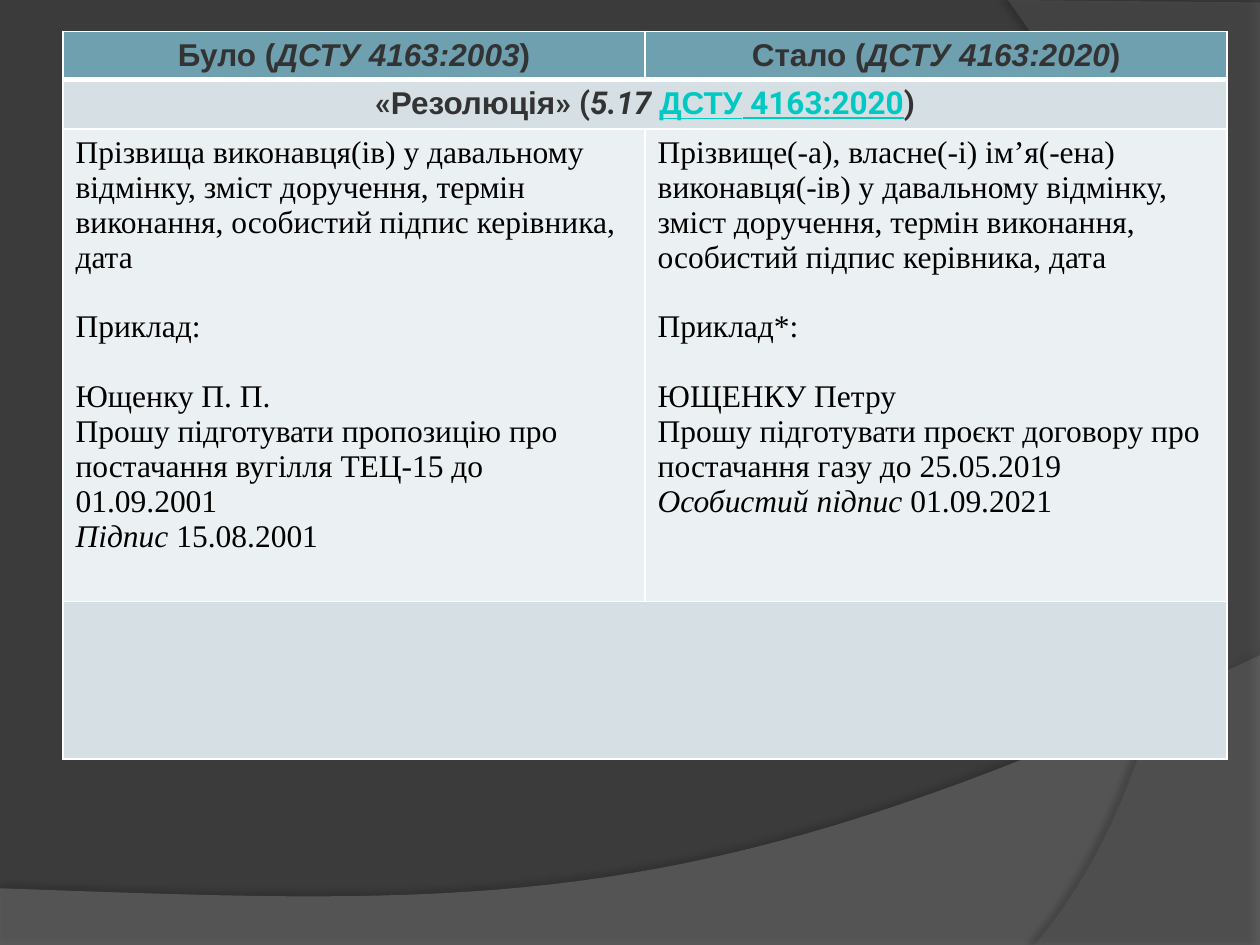
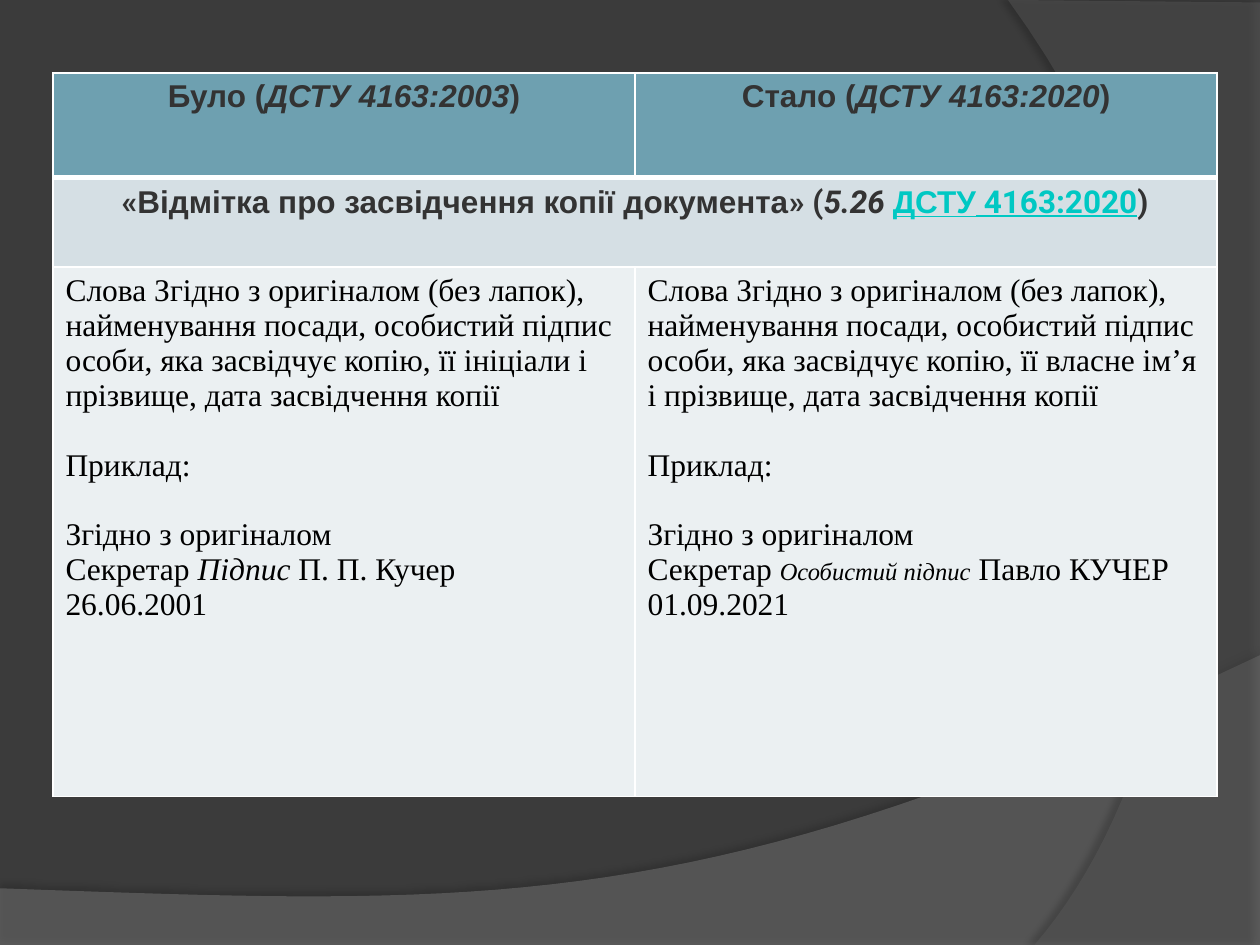
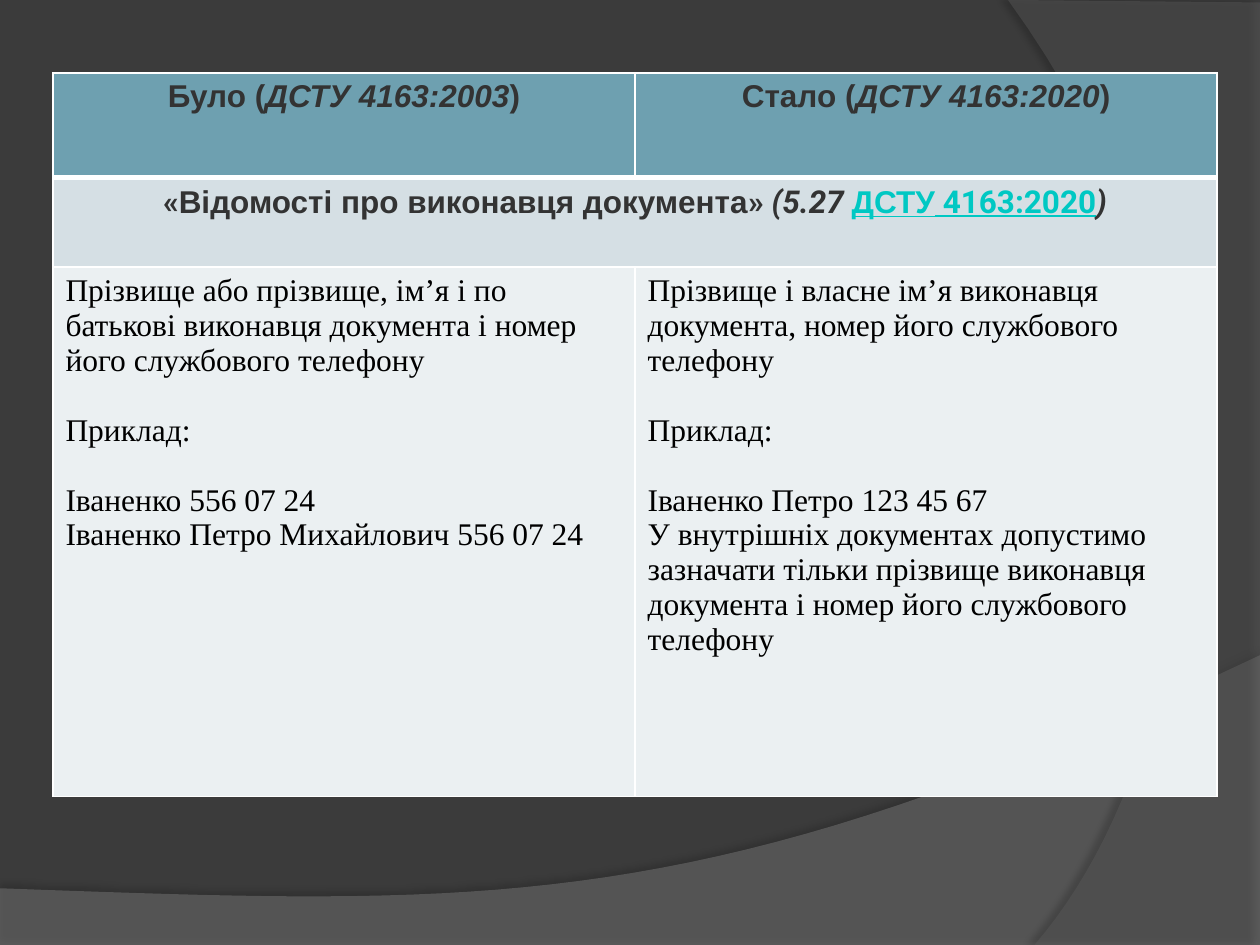
from lxml import etree
from pptx import Presentation
from pptx.dml.color import RGBColor
from pptx.enum.text import PP_ALIGN
from pptx.oxml.ns import qn
from pptx.util import Inches, Pt

COLORS = {
    "background": "3B3B3B",
    "wave": "7F7F7F",
    "arc": "5E5E5E",
    "shadow": "000000",
    "header": "6EA0B0",
    "section": "D5DFE4",
    "body": "EBF0F2",
    "border": "FFFFFF",
    "heading": "333333",
    "link": "00C8C3",
    "text": "000000",
}
HEADING_FONT, SECTION_FONT, BODY_FONT = "Arial", "Roboto", "Times New Roman"
COLUMN_WIDTH = 4.62
LINE_GAP = Pt(20)
EXAMPLE = "Приклад"


def rgb(name):
    return RGBColor.from_string(COLORS[name])


def bezier(start, c1, c2, end, steps=40):
    """Points along a cubic curve, without its start."""
    points = []
    for i in range(1, steps + 1):
        t = i / steps
        u = 1 - t
        points.append(tuple(
            u**3 * a + 3 * u * u * t * b + 3 * u * t * t * c + t**3 * d
            for a, b, c, d in zip(start, c1, c2, end)))
    return points


def add_curved_panel(slide, points, color, opacity, shadow):
    """Translucent outline; shadow is (opacity, blur, distance, angle)."""
    points = [(Inches(x), Inches(y)) for x, y in points]
    builder = slide.shapes.build_freeform(*points[0])
    builder.add_line_segments(points[1:], close=True)
    sp = builder.convert_to_shape()
    sp.line.fill.background()
    sp.fill.solid()
    sp.fill.fore_color.rgb = rgb(color)
    fill_color = sp.fill._xPr.find(qn("a:solidFill"))[0]
    etree.SubElement(fill_color, qn("a:alpha"), val=str(opacity * 1000))

    sp.shadow.inherit = False
    shade, blur, distance, angle = shadow
    outer = etree.SubElement(
        sp._element.spPr.find(qn("a:effectLst")), qn("a:outerShdw"),
        blurRad=str(Pt(blur)), dist=str(Pt(distance)),
        dir=str(angle * 60000), algn="ctr", rotWithShape="0")
    shadow_color = etree.SubElement(outer, qn("a:srgbClr"), val=COLORS["shadow"])
    etree.SubElement(shadow_color, qn("a:alpha"), val=str(shade * 1000))


def add_background(slide):
    slide.background.fill.solid()
    slide.background.fill.fore_color.rgb = rgb("background")
    wave = [(0, 7.05), (0, 7.51), (10, 7.51), (10, 5.2)]
    wave += bezier((10, 5.2), (5.59, 7.29), (3.91, 7.19), (0, 7.05))
    add_curved_panel(slide, wave, "wave", 45, (35, 4, 3.5, 270))
    arc = [(10, 0.02), (10, 7.5), (8.21, 7.5)]
    arc += bezier((8.21, 7.5), (9.35, 6.19), (10.18, 3), (8, 0))
    add_curved_panel(slide, arc, "arc", 40, (45, 4, 4, 180))


def set_borders(cell, top=1, bottom=1):
    tc_pr = cell._tc.get_or_add_tcPr()
    widths = {"a:lnL": 1, "a:lnR": 1, "a:lnT": top, "a:lnB": bottom}
    for i, (tag, width) in enumerate(widths.items()):
        ln = etree.Element(qn(tag), w=str(Pt(width)))
        fill = etree.SubElement(ln, qn("a:solidFill"))
        etree.SubElement(fill, qn("a:srgbClr"), val=COLORS["border"])
        tc_pr.insert(i, ln)


def fill_cell(cell, color):
    cell.fill.solid()
    cell.fill.fore_color.rgb = rgb(color)


def add_run(p, text, italic=None, size=None, font=None, link=False):
    r = p.add_run()
    r.text = text
    if italic:
        r.font.italic = True
    if size:
        r.font.size = Pt(size)
    if font:
        r.font.name = font
    if link:
        r.font.underline = True
        r.font.color.rgb = rgb("link")


def style_paragraph(p, font, color, bold=False):
    p.font.name = font
    p.font.size = Pt(18)
    p.font.bold = bold
    p.font.color.rgb = rgb(color)


def write_header(cell, word, year):
    p = cell.text_frame.paragraphs[0]
    p.alignment = PP_ALIGN.CENTER
    style_paragraph(p, HEADING_FONT, "heading", bold=True)
    add_run(p, f"{word} (")
    add_run(p, f"ДСТУ 4163:{year}", italic=True)
    add_run(p, ")")


def write_section(cell, name, clause, italic_brackets=False):
    p = cell.text_frame.paragraphs[0]
    p.alignment = PP_ALIGN.CENTER
    style_paragraph(p, SECTION_FONT, "heading", bold=True)
    add_run(p, "«")
    add_run(p, name, font=HEADING_FONT)
    add_run(p, "» ")
    add_run(p, "(", italic=italic_brackets)
    add_run(p, f"{clause} ", italic=True)
    add_run(p, "ДСТУ", font=HEADING_FONT, link=True)
    add_run(p, " 4163:2020", link=True)
    add_run(p, ")", italic=italic_brackets)


def write_body(cell, lines, signature_size=None):
    """Write one paragraph a line; text between underscores is a signature."""
    tf = cell.text_frame
    for i, line in enumerate(lines):
        p = tf.add_paragraph() if i else tf.paragraphs[0]
        style_paragraph(p, BODY_FONT, "text")
        if line.startswith(EXAMPLE):
            p.space_before = p.space_after = LINE_GAP
        for j, part in enumerate(line.split("_")):
            if part:
                signed = j % 2 == 1
                add_run(p, part, italic=signed,
                        size=signature_size if signed else None)


def add_comparison(slide, left, top, heights, section, before, after,
                   signature_size=None):
    """Old and new rules side by side, under a header and a section row."""
    frame = slide.shapes.add_table(
        len(heights), 2, Inches(left), Inches(top),
        Inches(2 * COLUMN_WIDTH), Inches(sum(heights)))
    table = frame.table
    table.first_row = table.horz_banding = False
    for column in table.columns:
        column.width = Inches(COLUMN_WIDTH)

    row_colors = ["header", "section", "body", "section"]
    for i, (height, color) in enumerate(zip(heights, row_colors)):
        table.rows[i].height = Inches(height)
        for cell in table.rows[i].cells:
            fill_cell(cell, color)
            set_borders(cell, top=3 if i == 1 else 1, bottom=3 if i == 0 else 1)
        if color == "section":
            table.cell(i, 0).merge(table.cell(i, 1))

    write_header(table.cell(0, 0), "Було", 2003)
    write_header(table.cell(0, 1), "Стало", 2020)
    write_section(table.cell(1, 0), *section)
    write_body(table.cell(2, 0), before)
    write_body(table.cell(2, 1), after, signature_size)


RESOLUTION = dict(
    left=0.5, top=0.25, heights=[0.38, 0.38, 3.75, 1.25],
    section=("Резолюція", "5.17"),
    before=[
        "Прізвища виконавця(ів) у давальному відмінку, зміст доручення, "
        "термін виконання, особистий підпис керівника, дата",
        "Приклад:",
        "Ющенку П. П.",
        "Прошу підготувати пропозицію про постачання вугілля ТЕЦ-15 "
        "до 01.09.2001",
        "_Підпис_ 15.08.2001",
    ],
    after=[
        "Прізвище(-а), власне(-і) ім’я(-ена) виконавця(-ів) у давальному "
        "відмінку, зміст доручення, термін виконання, особистий підпис "
        "керівника, дата",
        "Приклад*:",
        "ЮЩЕНКУ Петру",
        "Прошу підготувати проєкт договору про постачання газу до 25.05.2019",
        "_Особистий підпис_ 01.09.2021",
    ],
)
LOWER_TABLE = dict(left=0.42, top=0.58, heights=[0.83, 0.71, 4.2])
CERTIFIED_COPY = dict(
    LOWER_TABLE,
    section=("Відмітка про засвідчення копії документа", "5.26"),
    before=[
        "Слова Згідно з оригіналом (без лапок), найменування посади, "
        "особистий підпис особи, яка засвідчує копію, її ініціали і "
        "прізвище, дата засвідчення копії",
        "Приклад:",
        "Згідно з оригіналом",
        "Секретар _Підпис_ П. П. Кучер",
        "26.06.2001",
    ],
    after=[
        "Слова Згідно з оригіналом (без лапок), найменування посади, "
        "особистий підпис особи, яка засвідчує копію, її власне ім’я і "
        "прізвище, дата засвідчення копії",
        "Приклад:",
        "Згідно з оригіналом",
        "Секретар _Особистий підпис_ Павло КУЧЕР",
        "01.09.2021",
    ],
    signature_size=14,
)
DOCUMENT_AUTHOR = dict(
    LOWER_TABLE,
    section=("Відомості про виконавця документа", "5.27", True),
    before=[
        "Прізвище або прізвище, ім’я і по батькові виконавця документа "
        "і номер його службового телефону",
        "Приклад:",
        "Іваненко 556 07 24",
        "Іваненко Петро Михайлович 556 07 24",
    ],
    after=[
        "Прізвище і власне ім’я виконавця документа, номер його "
        "службового телефону",
        "Приклад:",
        "Іваненко Петро 123 45 67",
        "У внутрішніх документах допустимо зазначати тільки прізвище "
        "виконавця документа і номер його службового телефону",
    ],
)


def main():
    prs = Presentation()
    prs.slide_width, prs.slide_height = Inches(10), Inches(7.5)
    for comparison in (RESOLUTION, CERTIFIED_COPY, DOCUMENT_AUTHOR):
        slide = prs.slides.add_slide(prs.slide_layouts[6])
        add_background(slide)
        add_comparison(slide, **comparison)
    prs.save("out.pptx")


if __name__ == "__main__":
    main()
